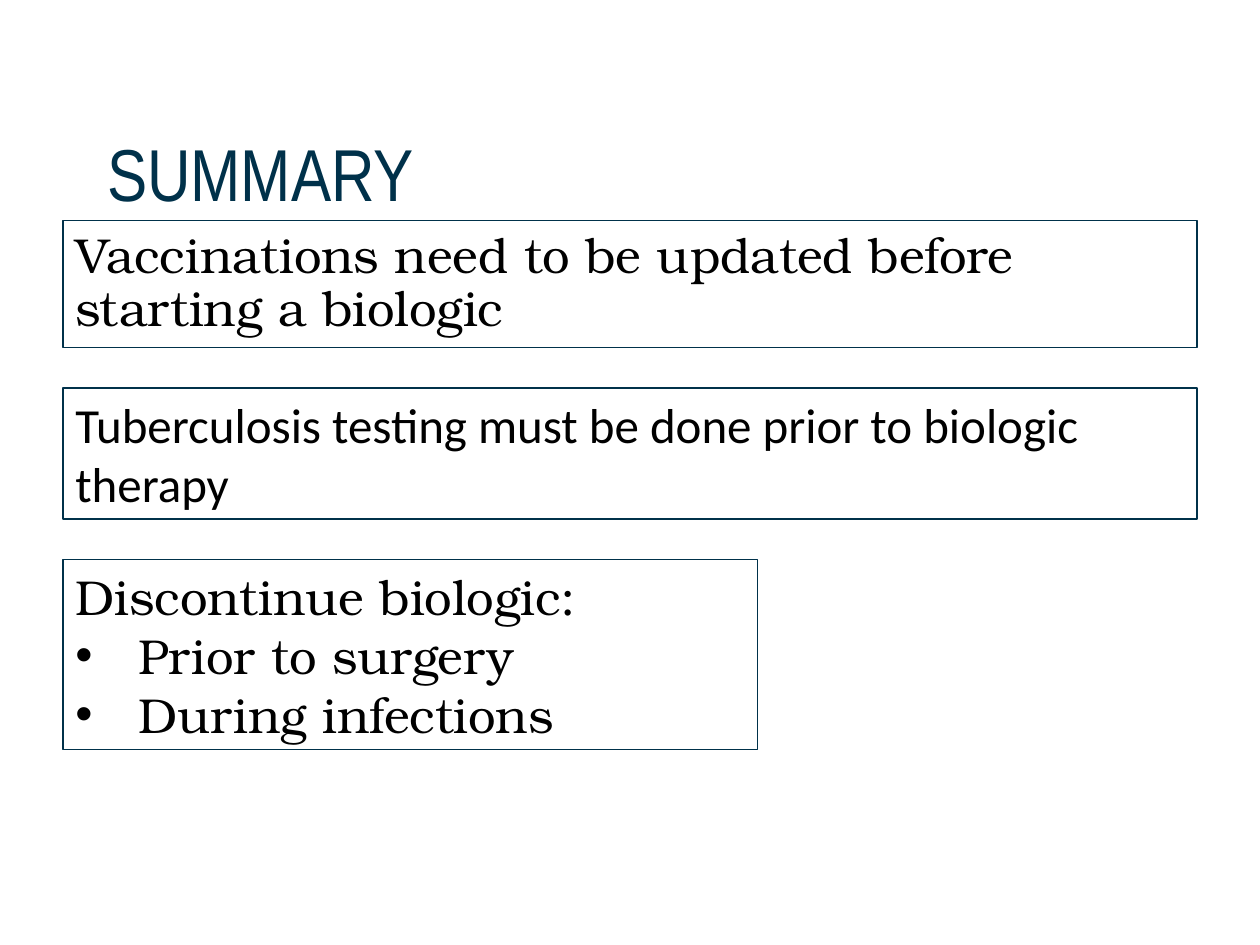
from lxml import etree
from pptx import Presentation
from pptx.dml.color import RGBColor
from pptx.enum.text import MSO_ANCHOR, PP_ALIGN
from pptx.oxml.ns import qn
from pptx.util import Inches, Pt

NAVY = RGBColor(0x00, 0x31, 0x4A)
BLACK = RGBColor(0x00, 0x00, 0x00)
MIDDLE, TOP = MSO_ANCHOR.MIDDLE, MSO_ANCHOR.TOP
LEFT = PP_ALIGN.LEFT
SERIF, SANS = "TeX Gyre Bonum", "Calibri"

# Content: statements from top to bottom
TITLE = "SUMMARY"
STATEMENTS = [
    {"lead": "Vaccinations need to be updated before starting a biologic",
     "bullets": [], "font": SERIF, "spacing": 0.9, "anchor": MIDDLE,
     "top": 1.75, "width": 9, "height": 1.01},
    {"lead": "Tuberculosis testing must be done prior to biologic therapy",
     "bullets": [], "font": SANS, "spacing": 1.0, "anchor": TOP,
     "top": 3.08, "width": 9, "height": 1.04},
    {"lead": "Discontinue biologic:",
     "bullets": ["Prior to surgery", "During infections"],
     "font": SERIF, "spacing": 1.0, "anchor": MIDDLE,
     "top": 4.44, "width": 5.51, "height": 1.51},
]
MARGIN = 0.5
BULLET_INDENT = Inches(0.5)


def add_bullet(paragraph):
    properties = paragraph._p.get_or_add_pPr()
    properties.set("marL", str(BULLET_INDENT))
    properties.set("indent", str(-BULLET_INDENT))
    etree.SubElement(properties, qn("a:buFont")).set("typeface", "Arial")
    etree.SubElement(properties, qn("a:buChar")).set("char", "•")


def style(paragraph, font, size, color, spacing):
    paragraph.alignment = LEFT
    paragraph.line_spacing = spacing
    paragraph.font.name = font
    paragraph.font.size = Pt(size)
    paragraph.font.color.rgb = color


def add_statement(slide, statement):
    box = slide.shapes.add_textbox(
        Inches(MARGIN), Inches(statement["top"]),
        Inches(statement["width"]), Inches(statement["height"]))
    box.line.color.rgb = NAVY
    box.line.width = Pt(0.75)
    frame = box.text_frame
    frame.word_wrap = True
    frame.vertical_anchor = statement["anchor"]
    frame.text = "\n".join([statement["lead"], *statement["bullets"]])
    for paragraph in frame.paragraphs[1:]:
        add_bullet(paragraph)
    for paragraph in frame.paragraphs:
        style(paragraph, statement["font"], 28, BLACK, statement["spacing"])


def main():
    presentation = Presentation()
    presentation.slide_width = Inches(10)
    presentation.slide_height = Inches(7.5)
    slide = presentation.slides.add_slide(presentation.slide_layouts[5])

    # Title
    title = slide.shapes.title
    title.left, title.top = Inches(0.75), Inches(0.53)
    title.width, title.height = Inches(8.5), Inches(1.76)
    title.text_frame.text = TITLE
    title.text_frame.vertical_anchor = MIDDLE
    style(title.text_frame.paragraphs[0], "Arial Narrow", 42, NAVY, 0.9)

    # Outlined statements
    for statement in STATEMENTS:
        add_statement(slide, statement)

    presentation.save("out.pptx")


if __name__ == "__main__":
    main()
